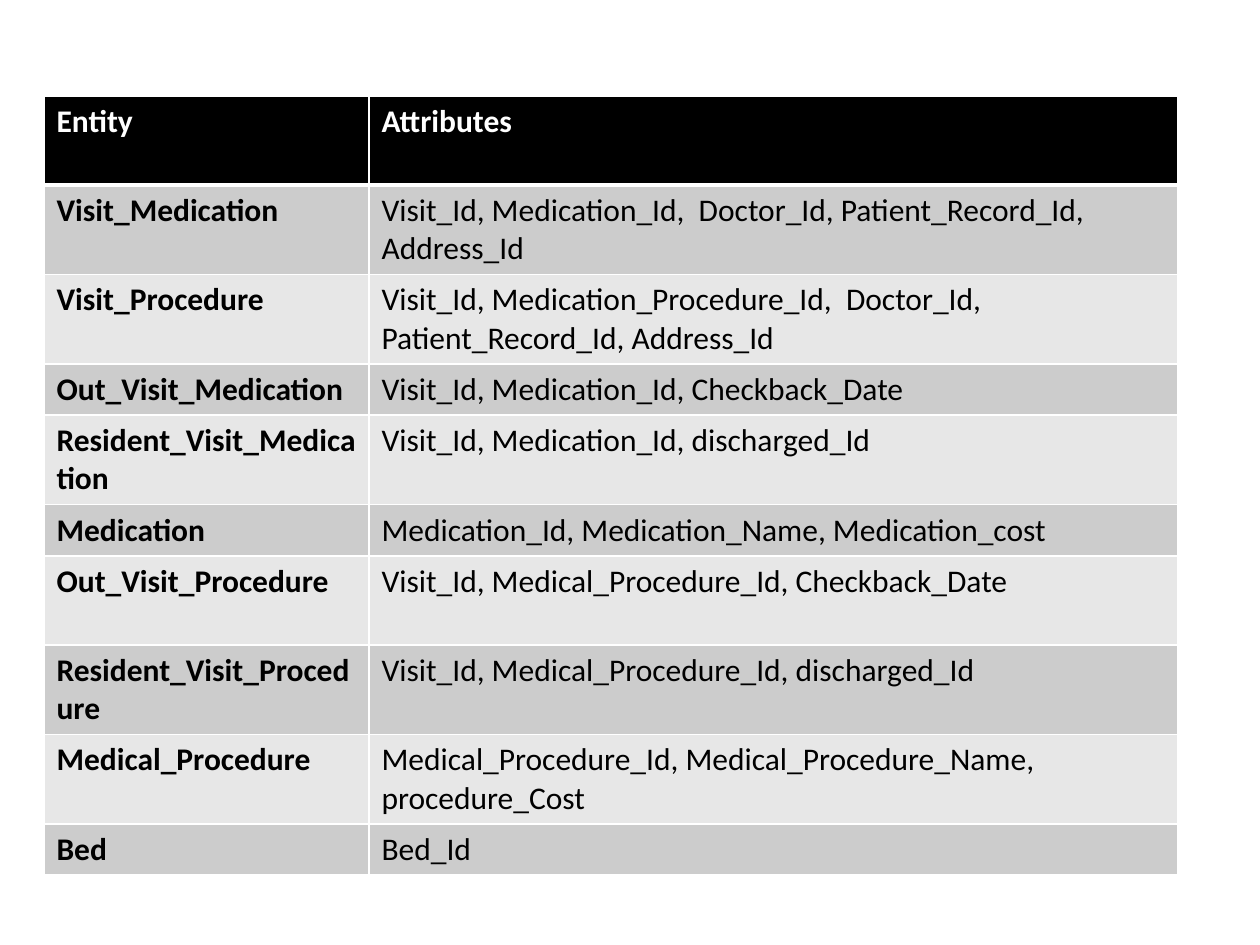
from dataclasses import dataclass

from lxml.etree import SubElement
from pptx import Presentation
from pptx.dml.color import RGBColor
from pptx.oxml.ns import qn
from pptx.slide import Slide
from pptx.table import _Cell
from pptx.util import Emu, Pt

EMU_PER_PX = 914400 / 126
SLIDE_WIDTH, SLIDE_HEIGHT = 1260, 945
TABLE_LEFT, TABLE_TOP = 44, 96
COLUMN_WIDTHS = (325, 809)
ONE_LINE, TWO_LINES = 51, 89


@dataclass(frozen=True)
class Theme:
    font: str = "Calibri"
    text_size: int = 18
    header_fill: str = "000000"
    header_text: str = "FFFFFF"
    body_text: str = "000000"
    bands: tuple[str, str] = ("CCCCCC", "E7E7E7")
    border: str = "FFFFFF"
    border_width: int = 1
    header_rule_width: int = 3


@dataclass(frozen=True)
class EntityRow:
    entity: str
    attributes: str
    height: int = TWO_LINES


THEME = Theme()
ROWS = (
    EntityRow("Entity", "Attributes"),
    EntityRow("Visit_Medication",
              "Visit_Id, Medication_Id,  Doctor_Id, Patient_Record_Id, Address_Id"),
    EntityRow("Visit_Procedure",
              "Visit_Id, Medication_Procedure_Id,  Doctor_Id, Patient_Record_Id, Address_Id"),
    EntityRow("Out_Visit_Medication", "Visit_Id, Medication_Id, Checkback_Date", ONE_LINE),
    EntityRow("Resident_Visit_Medication", "Visit_Id, Medication_Id, discharged_Id"),
    EntityRow("Medication", "Medication_Id, Medication_Name, Medication_cost", ONE_LINE),
    EntityRow("Out_Visit_Procedure", "Visit_Id, Medical_Procedure_Id, Checkback_Date"),
    EntityRow("Resident_Visit_Procedure", "Visit_Id, Medical_Procedure_Id, discharged_Id"),
    EntityRow("Medical_Procedure",
              "Medical_Procedure_Id, Medical_Procedure_Name, procedure_Cost"),
    EntityRow("Bed", "Bed_Id", ONE_LINE),
)


def px(length: int) -> Emu:
    return Emu(round(length * EMU_PER_PX))


def add_borders(cell: _Cell, bottom_width: int) -> None:
    """Line all four sides; must run before the fill, which follows lines in the schema."""
    properties = cell._tc.get_or_add_tcPr()
    for side in ("lnL", "lnR", "lnT", "lnB"):
        width = bottom_width if side == "lnB" else THEME.border_width
        line = SubElement(properties, qn(f"a:{side}"), w=str(Pt(width)))
        fill = SubElement(line, qn("a:solidFill"))
        SubElement(fill, qn("a:srgbClr"), val=THEME.border)


def style_cell(cell: _Cell, text: str, row_index: int, bold: bool) -> None:
    is_header = row_index == 0
    add_borders(cell, THEME.header_rule_width if is_header else THEME.border_width)
    fill = THEME.header_fill if is_header else THEME.bands[(row_index - 1) % 2]
    cell.fill.solid()
    cell.fill.fore_color.rgb = RGBColor.from_string(fill)
    cell.text = text
    font = cell.text_frame.paragraphs[0].font
    font.name = THEME.font
    font.size = Pt(THEME.text_size)
    font.bold = bold
    font.color.rgb = RGBColor.from_string(
        THEME.header_text if is_header else THEME.body_text)


def add_entity_table(slide: Slide, rows: tuple[EntityRow, ...]) -> None:
    table = slide.shapes.add_table(
        len(rows), len(COLUMN_WIDTHS), px(TABLE_LEFT), px(TABLE_TOP),
        px(sum(COLUMN_WIDTHS)), px(sum(row.height for row in rows))).table
    for column, width in zip(table.columns, COLUMN_WIDTHS):
        column.width = px(width)
    for index, row in enumerate(rows):
        table.rows[index].height = px(row.height)
        style_cell(table.cell(index, 0), row.entity, index, bold=True)
        style_cell(table.cell(index, 1), row.attributes, index, bold=index == 0)


def main() -> None:
    presentation = Presentation()
    presentation.slide_width = px(SLIDE_WIDTH)
    presentation.slide_height = px(SLIDE_HEIGHT)
    slide = presentation.slides.add_slide(presentation.slide_layouts[6])
    add_entity_table(slide, ROWS)
    presentation.save("out.pptx")


if __name__ == "__main__":
    main()
